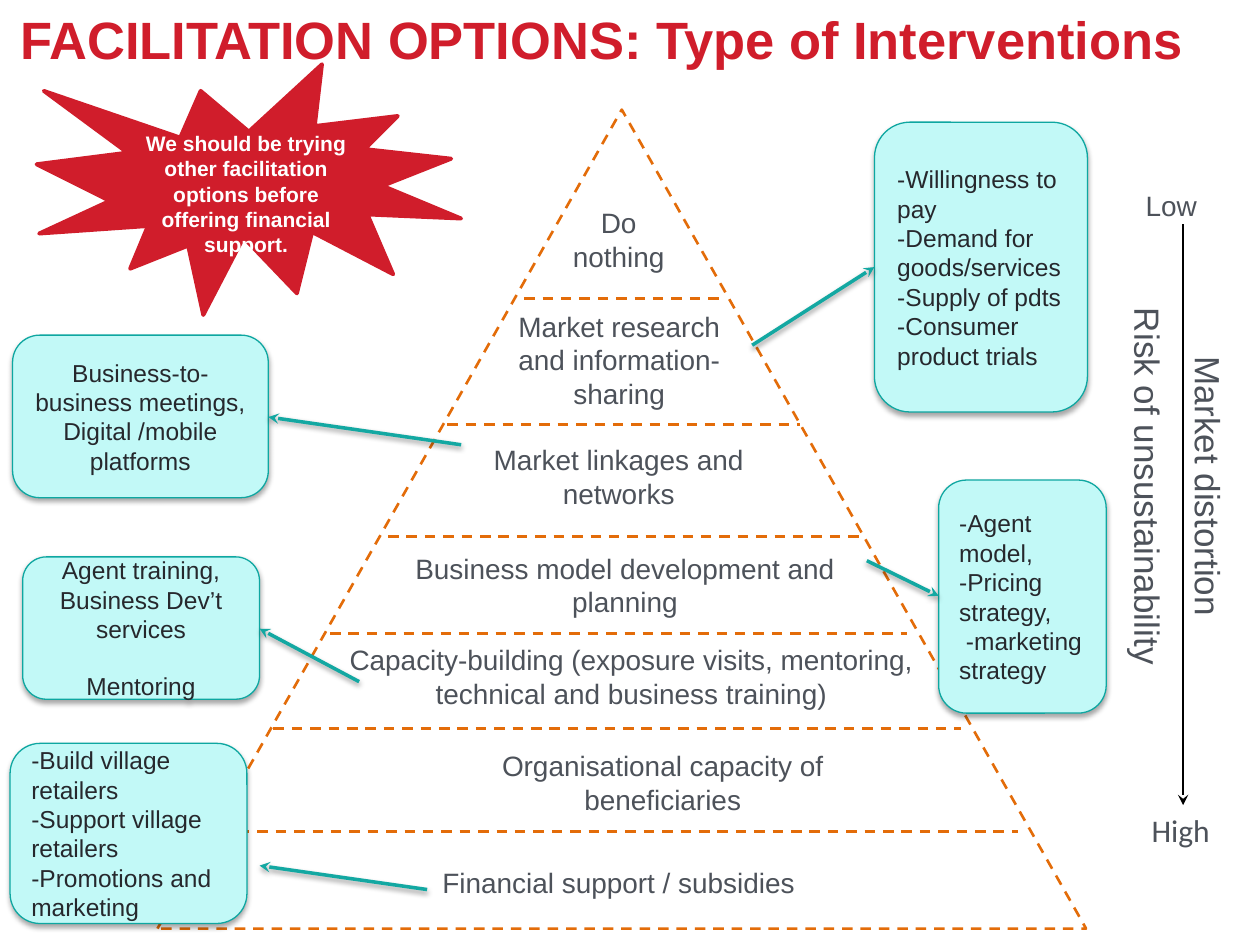
import pptx
import pptx.util
import pptx.dml.color
import pptx.enum.dml
import pptx.enum.shapes
import pptx.enum.text
import pptx.oxml
import pptx.oxml.ns

COLORS = {"red": "D01D2B", "orange": "E36C09", "teal": "13A8A2", "edge": "0EA7A1",
          "aqua": "C2F9F7", "grey": "4D525A", "ink": "26282D", "white": "FFFFFF",
          "black": "000000"}
COLUMNS, ROWS = 100, 75
CELL = pptx.util.Inches(0.1)
SHAPES = pptx.enum.shapes.MSO_SHAPE
ALIGN = pptx.enum.text.PP_ALIGN
ANCHOR = pptx.enum.text.MSO_ANCHOR


def grid(*values):
    return [round(value * CELL) for value in values]


def inside(box, left, top, width, height):
    """Move a part, given from the corner of its region, onto the page grid."""
    return box[0] + left, box[1] + top, width, height


def color(name):
    return pptx.dml.color.RGBColor.from_string(COLORS[name])


def set_effects(properties, shadow=None):
    effects = pptx.oxml.parse_xml(f"<a:effectLst {pptx.oxml.ns.nsdecls('a')}/>")
    if shadow:
        opacity, distance = shadow
        effects.append(pptx.oxml.parse_xml(
            f'<a:outerShdw {pptx.oxml.ns.nsdecls("a")} blurRad="{pptx.util.Pt(3.1)}" '
            f'dist="{pptx.util.Pt(distance)}" dir="5400000" rotWithShape="0">'
            f'<a:srgbClr val="{COLORS["black"]}"><a:alpha val="{opacity * 1000}"/>'
            '</a:srgbClr></a:outerShdw>'))
    properties.append(effects)


def style_line(line, name, width, dashed=False):
    line.color.rgb = color(name)
    line.width = pptx.util.Pt(width)
    if dashed:
        line.dash_style = pptx.enum.dml.MSO_LINE.DASH


def add_line(page, start, end, name, width, dashed=False, arrow=False, shadow=None):
    connector = page.shapes.add_connector(
        pptx.enum.shapes.MSO_CONNECTOR.STRAIGHT, *grid(*start, *end))
    style_line(connector.line, name, width, dashed)
    if arrow:
        connector.line._get_or_add_ln().append(pptx.oxml.parse_xml(
            f'<a:tailEnd {pptx.oxml.ns.nsdecls("a")} type="stealth"/>'))
    set_effects(connector._element.spPr, shadow)


def add_shape(page, kind, box, fill, edge, width, dashed=False, shadow=None):
    shape = page.shapes.add_shape(kind, *grid(*box))
    shape.fill.solid()
    shape.fill.fore_color.rgb = color(fill)
    style_line(shape.line, edge, width, dashed)
    set_effects(shape._element.spPr, shadow)
    return shape


def write(shape, lines, size, name, align=ALIGN.CENTER, anchor=ANCHOR.MIDDLE,
          bold=False, font="Arial", insets=(1, 0.5, 1, 0.5)):
    frame = shape.text_frame
    frame.word_wrap = True
    frame.vertical_anchor = anchor
    (frame.margin_left, frame.margin_top,
     frame.margin_right, frame.margin_bottom) = grid(*insets)
    for index, line in enumerate(lines):
        para = frame.paragraphs[0] if index == 0 else frame.add_paragraph()
        para.text = line
        para.alignment = align
        para.font.size = pptx.util.Pt(size)
        para.font.name = font
        para.font.bold = bold
        para.font.color.rgb = color(name)
    return frame.paragraphs


def add_label(page, box, text, size=16, name="grey", **style):
    label = page.shapes.add_textbox(*grid(*box))
    return label, write(label, [text], size, name, **style)


def add_title(page, box):
    _, paras = add_label(page, box, "FACILITATION OPTIONS: Type of Interventions", 30, "red",
                         align=ALIGN.LEFT, anchor=ANCHOR.TOP, bold=True, insets=(0, 0, 0, 0))
    paras[0].line_spacing = 0.8


def add_pyramid(page, box):
    add_shape(page, SHAPES.ISOSCELES_TRIANGLE, box, "white", "orange", 1.5, dashed=True)
    # Dividers: left end, right end, row
    for left, right, row in [(29.1, 45, 15), (23, 51, 25), (18.3, 55.9, 33.9),
                             (13.7, 59.5, 41.6), (9.2, 63.8, 49.1), (5, 68.3, 57.3)]:
        start = inside(box, left, row, 0, 0)[:2]
        end = inside(box, right, row, 0, 0)[:2]
        add_line(page, start, end, "orange", 1.5, dashed=True)
    # Tiers from the top down
    for text, *place in [
            ("Do nothing", 31.5, 7.1, 10.2, 6.4),
            ("Market research and information-sharing", 26.5, 15.3, 20.3, 9.1),
            ("Market linkages and networks", 24.9, 25.9, 23.4, 6.4),
            ("Business model development and planning", 17.8, 34.5, 38.6, 6.4),
            ("Capacity-building (exposure visits, mentoring, technical and business training)",
             13.7, 41.8, 47.8, 6.4),
            ("Organisational capacity of beneficiaries", 20.8, 50.2, 38.6, 6.4),
            ("Financial support / subsidies", 17.3, 59.5, 38.6, 3.7)]:
        add_label(page, inside(box, *place), text)


def add_scale(page, box):
    add_label(page, inside(box, 0, 0, 8.3, 3.7), "Low", anchor=ANCHOR.TOP)
    add_label(page, inside(box, 0, 49.4, 9.8, 4), "High", 18, font="Calibri",
              anchor=ANCHOR.TOP)
    add_line(page, inside(box, 5.1, 3.3, 0, 0)[:2], inside(box, 5.1, 49.4, 0, 0)[:2],
             "black", 0.75, arrow=True)
    for text, left, width in [("Market distortion", -10.2, 34.6),
                              ("Risk of unsustainability", -16.2, 37)]:
        label, _ = add_label(page, inside(box, left, 21.9, width, 4.4), text, 20,
                             anchor=ANCHOR.TOP)
        label.rotation = 90


def add_burst(page, box):
    burst = add_shape(page, SHAPES.EXPLOSION1, box, "red", "red", 2.25)
    write(burst, ["We should be trying other facilitation options before offering "
                  "financial support."], 12, "white", bold=True, insets=(1, 2.9, 1, 1))


def add_callout(page, box, lines, align, tail, tip):
    callout = add_shape(page, SHAPES.ROUNDED_RECTANGLE, box, "aqua", "edge", 0.75,
                        shadow=(35, 1.8))
    paras = write(callout, lines, 14, "ink", align)
    add_line(page, inside(box, *tail, 0, 0)[:2], inside(box, *tip, 0, 0)[:2],
             "teal", 2, arrow=True, shadow=(38, 1.6))
    return paras


def add_callouts(page):
    # Box, lines, alignment, then arrow start and end from the box corner
    add_callout(page, (69.4, 9.7, 16.9, 23),
                ["-Willingness to pay", "-Demand for goods/services", "-Supply of pdts",
                 "-Consumer product trials"], ALIGN.LEFT, (-9.7, 17.7), (0, 11.5))
    add_callout(page, (1, 26.6, 20.3, 12.9),
                ["Business-to-business meetings,", "Digital /mobile platforms"],
                ALIGN.CENTER, (35.6, 8.7), (20.3, 6.5))
    add_callout(page, (74.5, 38.1, 13.3, 18.5),
                ["-Agent model,", "-Pricing strategy,", " -marketing strategy"],
                ALIGN.LEFT, (-5.7, 6.4), (0, 9.2))
    training = add_callout(page, (1.8, 44.2, 18.8, 11.3),
                           ["Agent training,", "Business Dev’t services", "Mentoring"],
                           ALIGN.CENTER, (26.7, 9.9), (18.8, 5.7))
    training[-1].space_before = pptx.util.Pt(16)
    add_callout(page, (0.8, 59, 18.8, 14.3),
                ["-Build village retailers", "-Support village retailers",
                 "-Promotions and marketing"], ALIGN.LEFT, (33.1, 11.6), (19.8, 9.7))


def main():
    deck = pptx.Presentation()
    deck.slide_width, deck.slide_height = grid(COLUMNS, ROWS)
    page = deck.slides.add_slide(deck.slide_layouts[6])
    add_pyramid(page, (12.5, 8.7, 73.7, 65))
    add_title(page, (1.6, 1.5, 96.6, 4.9))
    add_scale(page, (88.8, 14.5, 9.8, 53.4))
    add_burst(page, (2.9, 5.1, 33.7, 19.9))
    add_callouts(page)
    deck.save("out.pptx")


if __name__ == "__main__":
    main()
